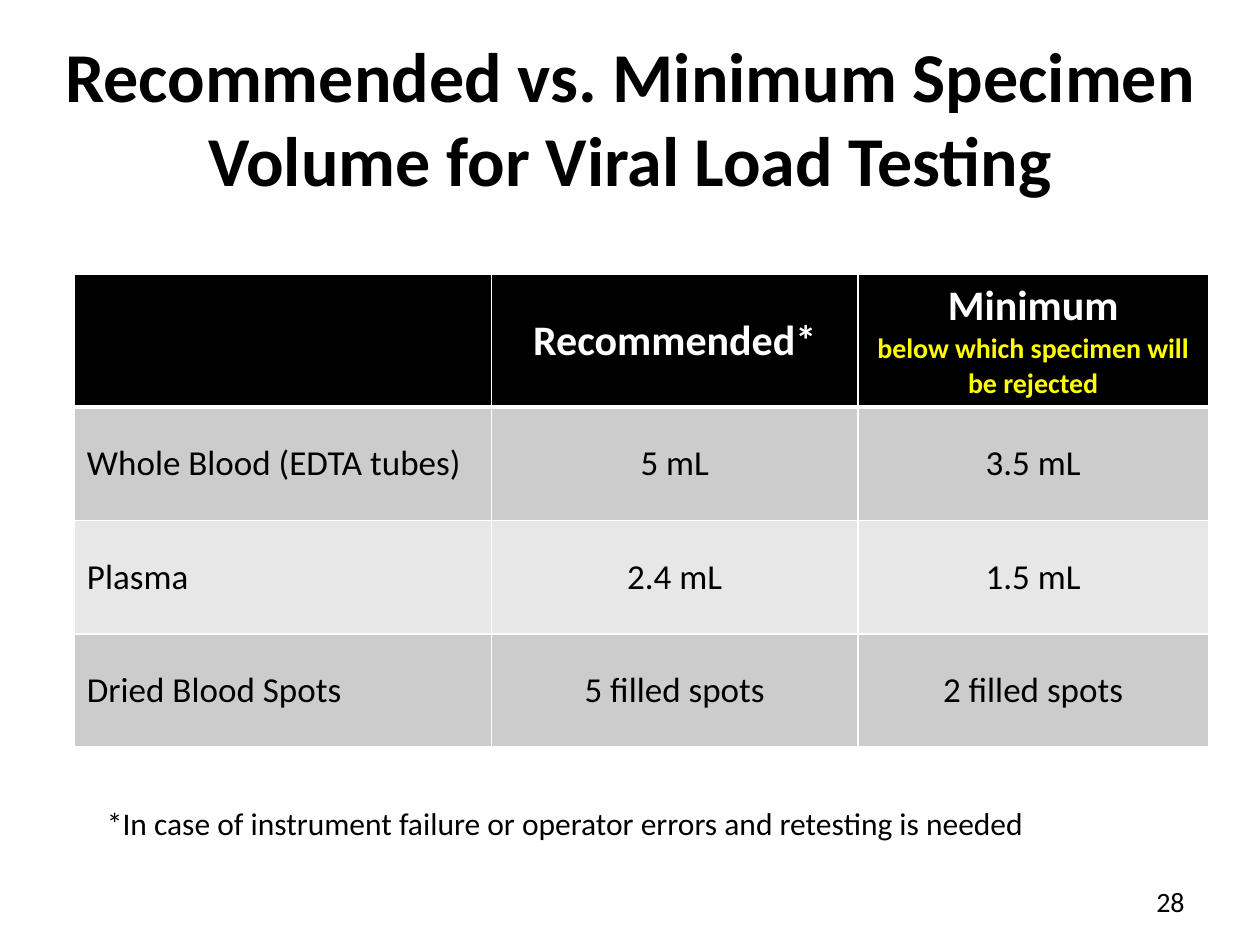
from lxml import etree
from pptx import Presentation
from pptx.dml.color import RGBColor
from pptx.enum.text import MSO_ANCHOR, PP_ALIGN
from pptx.oxml.ns import qn
from pptx.util import Inches, Pt

LEFT, CENTER, RIGHT = PP_ALIGN.LEFT, PP_ALIGN.CENTER, PP_ALIGN.RIGHT
TOP, MIDDLE = MSO_ANCHOR.TOP, MSO_ANCHOR.MIDDLE
BLACK, WHITE, YELLOW = "000000", "FFFFFF", "FFFF00"
BANDS = ["CCCCCC", "E7E7E7"]


def color(value):
    return RGBColor.from_string(value)


def write(frame, lines, align, anchor=MIDDLE):
    """Fill a text frame with (text, font format) lines, one paragraph each."""
    frame.word_wrap = True
    frame.vertical_anchor = anchor
    for index, (text, font_format) in enumerate(lines):
        para = frame.add_paragraph() if index else frame.paragraphs[0]
        para.alignment = align
        span = para.add_run()
        span.text = text
        values = {"name": "Calibri", "bold": False, **font_format}
        span.font.color.rgb = color(values.pop("color", BLACK))
        for name, value in values.items():
            setattr(span.font, name, value)


deck = Presentation()
deck.slide_width, deck.slide_height = Inches(10), Inches(7.5)
page = deck.slides.add_slide(deck.slide_layouts[5])

# Title
title = page.shapes.title
title.left, title.top = Inches(0.12), Inches(0.3)
title.width, title.height = Inches(9.76), Inches(1.25)
write(title.text_frame,
      [("Recommended vs. Minimum Specimen Volume for Viral Load Testing",
        {"size": Pt(40), "bold": True})], CENTER)

# Table content: header row, then one row per specimen type
heading = {"size": Pt(24), "bold": True, "color": WHITE}
remark = {"size": Pt(16), "bold": True, "color": YELLOW}
body = {"size": Pt(20)}
specimens = [
    ["Whole Blood (EDTA tubes)", "5 mL", "3.5 mL"],
    ["Plasma", "2.4 mL", "1.5 mL"],
    ["Dried Blood Spots", "5 filled spots", "2 filled spots"],
]
rows = [[[], [("Recommended*", heading)],
         [("Minimum", heading), ("below which specimen will be rejected", remark)]]]
rows += [[[(text, body)] for text in specimen] for specimen in specimens]

# Volume table
column_widths = [3.31, 2.91, 2.78]
row_heights = [1.03] + [0.9] * len(specimens)
table = page.shapes.add_table(
    len(rows), len(column_widths), Inches(0.59), Inches(2.18),
    Inches(sum(column_widths)), Inches(sum(row_heights))).table
for column, width in zip(table.columns, column_widths):
    column.width = Inches(width)
for row, height in zip(table.rows, row_heights):
    row.height = Inches(height)

for r, row in enumerate(rows):
    for c, lines in enumerate(row):
        cell = table.cell(r, c)
        write(cell.text_frame, lines, CENTER if c else LEFT)
        cell.vertical_anchor = MIDDLE
        # White borders, thicker between header and body
        properties = cell._tc.get_or_add_tcPr()
        for side in ("L", "R", "T", "B"):
            thick = (r, side) in ((0, "B"), (1, "T"))
            line = etree.SubElement(properties, qn(f"a:ln{side}"), w=str(Pt(3 if thick else 1)))
            fill = etree.SubElement(line, qn("a:solidFill"))
            etree.SubElement(fill, qn("a:srgbClr"), val=WHITE)
        cell.fill.solid()
        cell.fill.fore_color.rgb = color(BANDS[(r - 1) % 2] if r else BLACK)

# Slide number and footnote
for text, size, align, anchor, area in [
    ("28", 16, RIGHT, MIDDLE, (7.17, 6.95, 2.33, 0.4)),
    ("*In case of instrument failure or operator errors and retesting is needed",
     18, LEFT, TOP, (0.75, 6.33, 7.57, 0.4)),
]:
    box = page.shapes.add_textbox(*map(Inches, area))
    write(box.text_frame, [(text, {"size": Pt(size)})], align, anchor)

deck.save("out.pptx")
